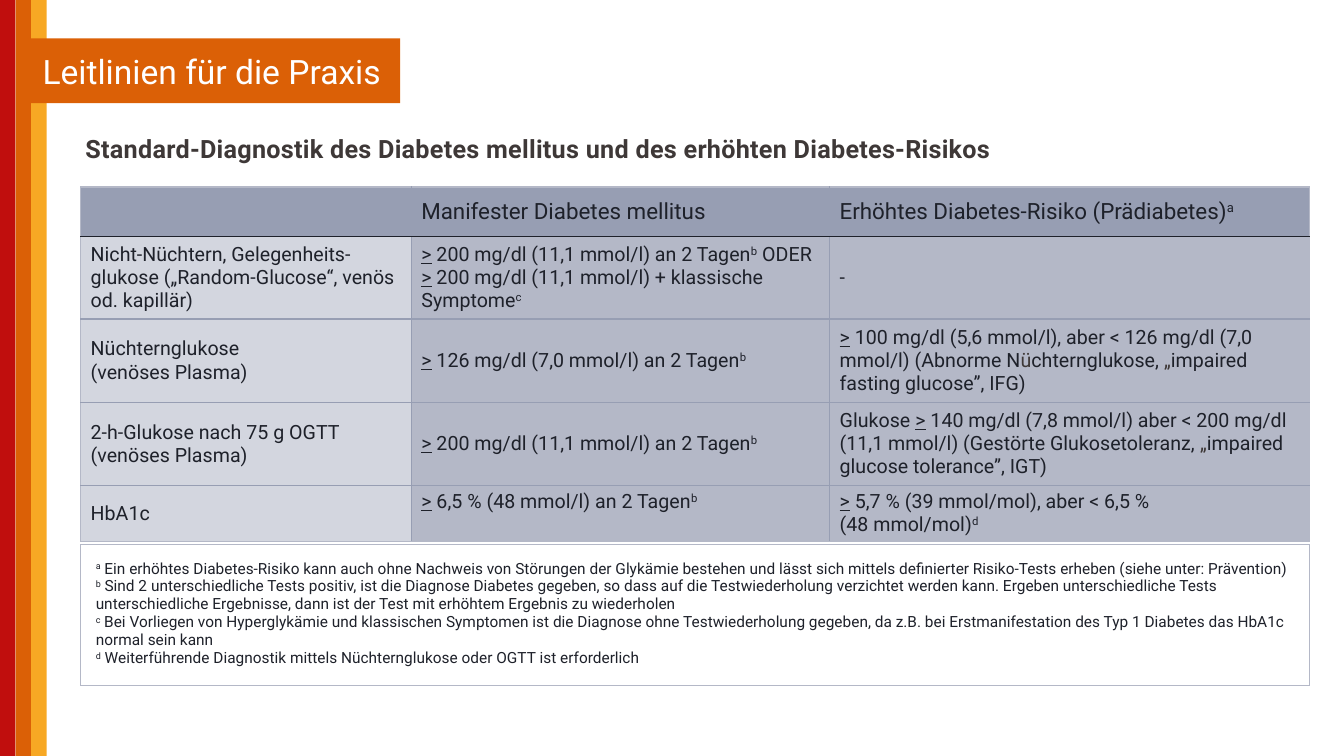
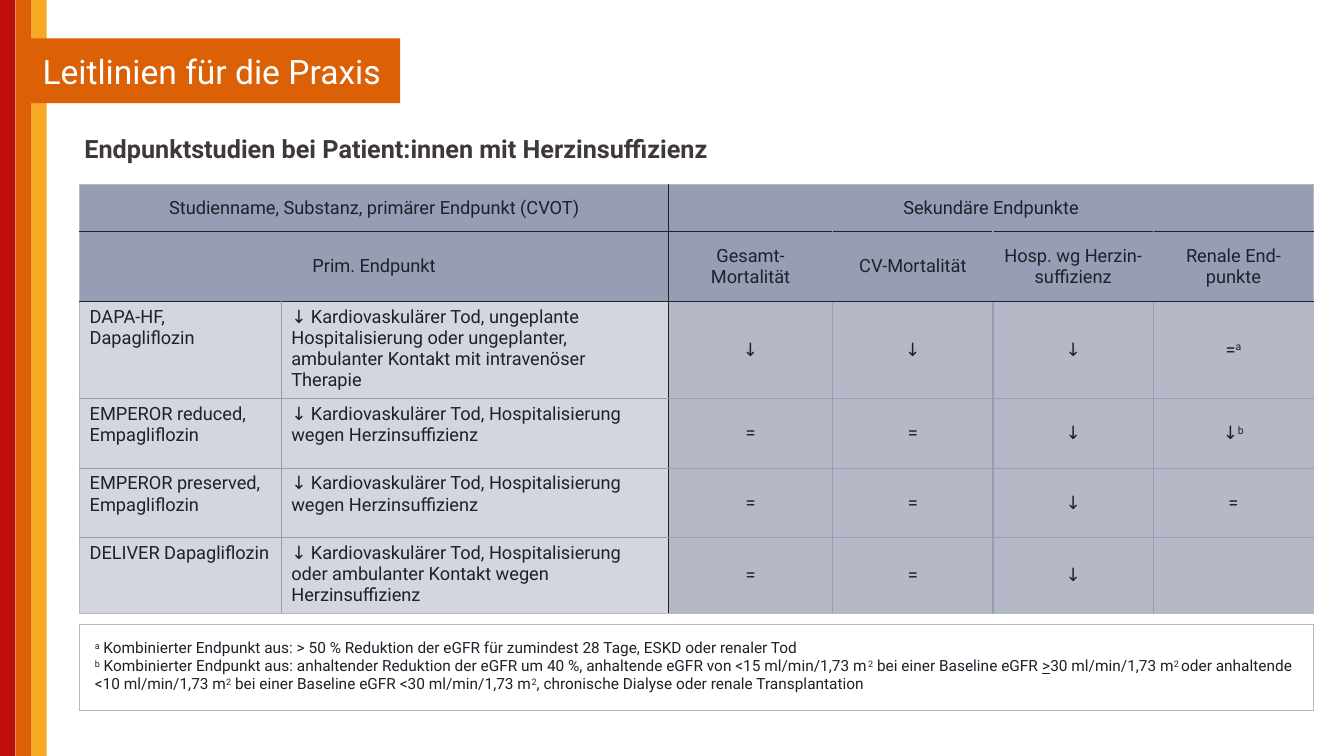
from lxml.etree import SubElement
from pptx import Presentation
from pptx.dml.color import RGBColor
from pptx.enum.shapes import MSO_SHAPE
from pptx.enum.text import MSO_ANCHOR, PP_ALIGN
from pptx.oxml.ns import qn
from pptx.util import Pt

FONT = "Roboto"
INK, HEADING, WHITE = "1E212A", "3E3837", "FFFFFF"
HEADER, LABEL, BODY = "979EB3", "D3D6DF", "B4B8C7"
INNER_LINE, OUTER_LINE = HEADER, BODY
STRIPES = ["C00E0D", "DB6006", "F7A824"]
BANNER = "DB6006"
STRIPE_WIDTH = 11.1
SLIDE_WIDTH, SLIDE_HEIGHT = 960, 540
BANNER_TEXT = "Leitlinien für die Praxis"

# Text is split at "|"; a part starting with ^ is superscript, _ underlined,
# ~ in the heading colour, and \v is a line break.
PAGES = [
    {
        "heading": "Standard-Diagnostik des Diabetes mellitus und des erhöhten Diabetes-Risikos",
        "heading_left": 54,
        "spacing": 20,
        "table": {
            "left": 57.6, "top": 133.5,
            "columns": [236.2, 298.8, 342.7],
            "rows": [35.3, 59, 59.8, 59, 40],
            "header_rows": 1, "label_columns": 1,
            "dark_rows": [1], "dark_columns": [],
            "header_size": 16, "size": 14,
            "centred": False, "top_cells": [(4, 1)], "merges": [],
            "cells": [
                ["", "Manifester Diabetes mellitus",
                 "Erhöhtes Diabetes-Risiko (Prädiabetes)|^a"],
                ["Nicht-Nüchtern, Gelegenheits-glukose („Random-Glucose“, venös od. kapillär)",
                 "_>| 200 mg/dl (11,1 mmol/l) an 2 Tagen|^b| ODER\n"
                 "_>| 200 mg/dl (11,1 mmol/l) + klassische Symptome|^c",
                 "-"],
                ["Nüchternglukose\n(venöses Plasma)",
                 "_>| 126 mg/dl (7,0 mmol/l) an 2 Tagen|^b",
                 "_>| 100 mg/dl (5,6 mmol/l), aber < 126 mg/dl (7,0 mmol/l) "
                 "(Abnorme N|~ü|chternglukose, |~„|impaired fasting glucose”, IFG)"],
                ["2-h-Glukose nach 75 g OGTT (venöses Plasma)",
                 "_>| 200 mg/dl (11,1 mmol/l) an 2 Tagen|^b",
                 "Glukose |_>| 140 mg/dl (7,8 mmol/l) aber < 200 mg/dl (11,1 mmol/l) "
                 "(Gestörte Glukosetoleranz, |~„|impaired glucose tolerance”, IGT)"],
                ["HbA1c",
                 "_>| 6,5 % (48 mmol/l) an 2 Tagen|^b",
                 "_>| 5,7 % (39 mmol/mol), aber < 6,5 % |\v|(48 mmol/mol)|^d"],
            ],
        },
        "notes_top": 389,
        "notes_height": 98.6,
        "notes": [
            "^a| Ein erhöhtes Diabetes-Risiko kann auch ohne Nachweis von Störungen der "
            "Glykämie bestehen und lässt sich mittels definierter Risiko-Tests erheben "
            "(siehe unter: Prävention)",
            "^b| Sind 2 unterschiedliche Tests positiv, ist die Diagnose Diabetes gegeben, "
            "so dass auf die Testwiederholung verzichtet werden kann. Ergeben "
            "unterschiedliche Tests unterschiedliche Ergebnisse, dann ist der Test mit "
            "erhöhtem Ergebnis zu wiederholen",
            "^c| Bei Vorliegen von Hyperglykämie und klassischen Symptomen ist die Diagnose "
            "ohne Testwiederholung gegeben, da z.B. bei Erstmanifestation des Typ 1 "
            "Diabetes das HbA1c normal sein kann",
            "^d| Weiterführende Diagnostik mittels Nüchternglukose oder OGTT ist erforderlich",
        ],
    },
    {
        "heading": "Endpunktstudien bei Patient:innen mit Herzinsuffizienz",
        "heading_left": 53.3,
        "spacing": 0,
        "table": {
            "left": 56.9, "top": 131.7,
            "columns": [144, 276.5, 117.4, 114.5, 114.5, 114.5],
            "rows": [33.8, 49.7, 69, 49.5, 49.5, 54],
            "header_rows": 2, "label_columns": 2,
            "dark_rows": [1, 2], "dark_columns": [2],
            "header_size": 13, "size": 13,
            "centred": True, "top_cells": [],
            "merges": [(0, 0, 1), (0, 2, 5), (1, 0, 1)],
            "cells": [
                ["Studienname, Substanz, primärer Endpunkt (CVOT)", "",
                 "Sekundäre Endpunkte", "", "", ""],
                ["Prim. Endpunkt", "", "Gesamt-Mortalität", "CV-Mortalität",
                 "Hosp. wg Herzin-suffizienz", "Renale End- punkte"],
                ["DAPA-HF, Dapagliflozin",
                 "↓ Kardiovaskulärer Tod, ungeplante Hospitalisierung oder ungeplanter, "
                 "ambulanter Kontakt mit intravenöser Therapie",
                 "↓", "↓", "↓", "=|^a"],
                ["EMPEROR reduced, Empagliflozin",
                 "↓ Kardiovaskulärer Tod, Hospitalisierung wegen Herzinsuffizienz",
                 "=", "=", "↓", "↓|^b"],
                ["EMPEROR preserved, Empagliflozin",
                 "↓ Kardiovaskulärer Tod, Hospitalisierung wegen Herzinsuffizienz",
                 "=", "=", "↓", "="],
                ["DELIVER Dapagliflozin",
                 "↓ Kardiovaskulärer Tod, Hospitalisierung oder ambulanter Kontakt wegen "
                 "Herzinsuffizienz",
                 "=", "=", "↓", ""],
            ],
        },
        "notes_top": 446,
        "notes_height": 61,
        "notes": [
            "^a| Kombinierter Endpunkt aus: > 50 % Reduktion der eGFR für zumindest 28 Tage, "
            "ESKD oder renaler Tod",
            "^b| Kombinierter Endpunkt aus: anhaltender Reduktion der eGFR um 40 %, "
            "anhaltende eGFR von <15 ml/min/1,73 m|^2| bei einer Baseline eGFR |_>|"
            "30 ml/min/1,73 m|^2 |oder anhaltende <10 ml/min/1,73 m|^2| bei einer Baseline "
            "eGFR <30 ml/min/1,73 m|^2|, chronische Dialyse oder renale Transplantation",
        ],
    },
]


def colour(value):
    return RGBColor.from_string(value)


def set_font(paragraph, size, ink, bold=False):
    font = paragraph.font
    font.name, font.size, font.bold = FONT, Pt(size), bold
    font.color.rgb = colour(ink)


def write_marked(paragraph, text):
    """Add one run per part of the marked-up text."""
    for part in text.split("|"):
        if part == "\v":
            paragraph.add_line_break()
            continue
        mark = part[:1] if part[:1] in ("^", "_", "~") else ""
        span = paragraph.add_run()
        span.text = part[len(mark):]
        if mark == "^":
            span.font._element.set("baseline", "30000")
        elif mark == "_":
            span.font.underline = True
        elif mark == "~":
            span.font.color.rgb = colour(HEADING)


def fill_cell(cell, text, size, fill=None, centred=False, anchor=MSO_ANCHOR.MIDDLE):
    cell.vertical_anchor = anchor
    if fill:
        cell.fill.solid()
        cell.fill.fore_color.rgb = colour(fill)
    else:
        cell.fill.background()
    frame = cell.text_frame
    for index, line in enumerate(text.split("\n")):
        paragraph = frame.add_paragraph() if index else frame.paragraphs[0]
        if line:
            write_marked(paragraph, line)
        paragraph.alignment = PP_ALIGN.CENTER if centred else PP_ALIGN.LEFT
        set_font(paragraph, size, INK)


def set_borders(cell, left, right, top, bottom):
    properties = cell._tc.get_or_add_tcPr()
    edges = zip(("a:lnL", "a:lnR", "a:lnT", "a:lnB"), (left, right, top, bottom))
    for index, (tag, value) in enumerate(edges):
        line = SubElement(properties, qn(tag), w=str(Pt(1)))
        SubElement(SubElement(line, qn("a:solidFill")), qn("a:srgbClr"), val=value)
        properties.insert(index, line)


def line_colour(position, last, dark):
    if position in dark:
        return INK
    return OUTER_LINE if position in (0, last) else INNER_LINE


def add_plain_table(page, left, top, columns, rows):
    frame = page.shapes.add_table(len(rows), len(columns), Pt(left), Pt(top),
                                  Pt(sum(columns)), Pt(sum(rows)))
    table = frame.table
    table.first_row = table.horz_banding = False
    for column, width in zip(table.columns, columns):
        column.width = Pt(width)
    for row, height in zip(table.rows, rows):
        row.height = Pt(height)
    return table


def add_data_table(page, data):
    columns, rows = data["columns"], data["rows"]
    table = add_plain_table(page, data["left"], data["top"], columns, rows)
    for row, first, last in data["merges"]:
        table.cell(row, first).merge(table.cell(row, last))
    for r, texts in enumerate(data["cells"]):
        for c, text in enumerate(texts):
            cell = table.cell(r, c)
            if cell.is_spanned:
                continue
            header = r < data["header_rows"]
            label = not header and c < data["label_columns"]
            at_top = (label and data["centred"]) or (r, c) in data["top_cells"]
            fill_cell(cell, text, data["header_size"] if header else data["size"],
                      HEADER if header else LABEL if label else BODY,
                      data["centred"] and not label,
                      MSO_ANCHOR.TOP if at_top else MSO_ANCHOR.MIDDLE)
            width = cell.span_width if cell.is_merge_origin else 1
            set_borders(cell,
                        *(line_colour(x, len(columns), data["dark_columns"])
                          for x in (c, c + width)),
                        *(line_colour(y, len(rows), data["dark_rows"])
                          for y in (r, r + 1)))


def add_notes_box(page, content):
    data = content["table"]
    table = add_plain_table(page, data["left"], content["notes_top"],
                            [sum(data["columns"])], [content["notes_height"]])
    cell = table.cell(0, 0)
    cell.margin_left = cell.margin_right = cell.margin_top = cell.margin_bottom = Pt(10.8)
    fill_cell(cell, "\n".join(content["notes"]), 11, anchor=MSO_ANCHOR.TOP)
    set_borders(cell, *[OUTER_LINE] * 4)


def add_block(page, left, top, width, height, fill):
    block = page.shapes.add_shape(MSO_SHAPE.RECTANGLE, Pt(left), Pt(top),
                                  Pt(width), Pt(height))
    block.shadow.inherit = False
    block.fill.solid()
    block.fill.fore_color.rgb = colour(fill)
    block.line.fill.background()
    return block


def add_frame(page):
    """Draw the stripes and the banner that every page shares."""
    for index, fill in enumerate(STRIPES):
        add_block(page, index * STRIPE_WIDTH, 0, STRIPE_WIDTH, SLIDE_HEIGHT, fill)
    banner = add_block(page, 16.6, 27.5, 269.3, 46.2, BANNER)
    banner.text_frame.vertical_anchor = MSO_ANCHOR.MIDDLE
    paragraph = banner.text_frame.paragraphs[0]
    paragraph.add_run().text = BANNER_TEXT
    paragraph.alignment = PP_ALIGN.CENTER
    set_font(paragraph, 24, WHITE)


def add_heading(page, content):
    box = page.shapes.add_textbox(Pt(content["heading_left"]), Pt(94.3), Pt(880), Pt(34.6))
    box.text_frame.word_wrap = True
    paragraph = box.text_frame.paragraphs[0]
    span = paragraph.add_run()
    span.text = content["heading"]
    if content["spacing"]:
        span.font._element.set("spc", str(content["spacing"]))
    paragraph.line_spacing = 0.9
    set_font(paragraph, 18, HEADING, bold=True)


def main():
    deck = Presentation()
    deck.slide_width, deck.slide_height = Pt(SLIDE_WIDTH), Pt(SLIDE_HEIGHT)
    for content in PAGES:
        page = deck.slides.add_slide(deck.slide_layouts[6])
        add_frame(page)
        add_data_table(page, content["table"])
        add_heading(page, content)
        add_notes_box(page, content)
    deck.save("out.pptx")


if __name__ == "__main__":
    main()
